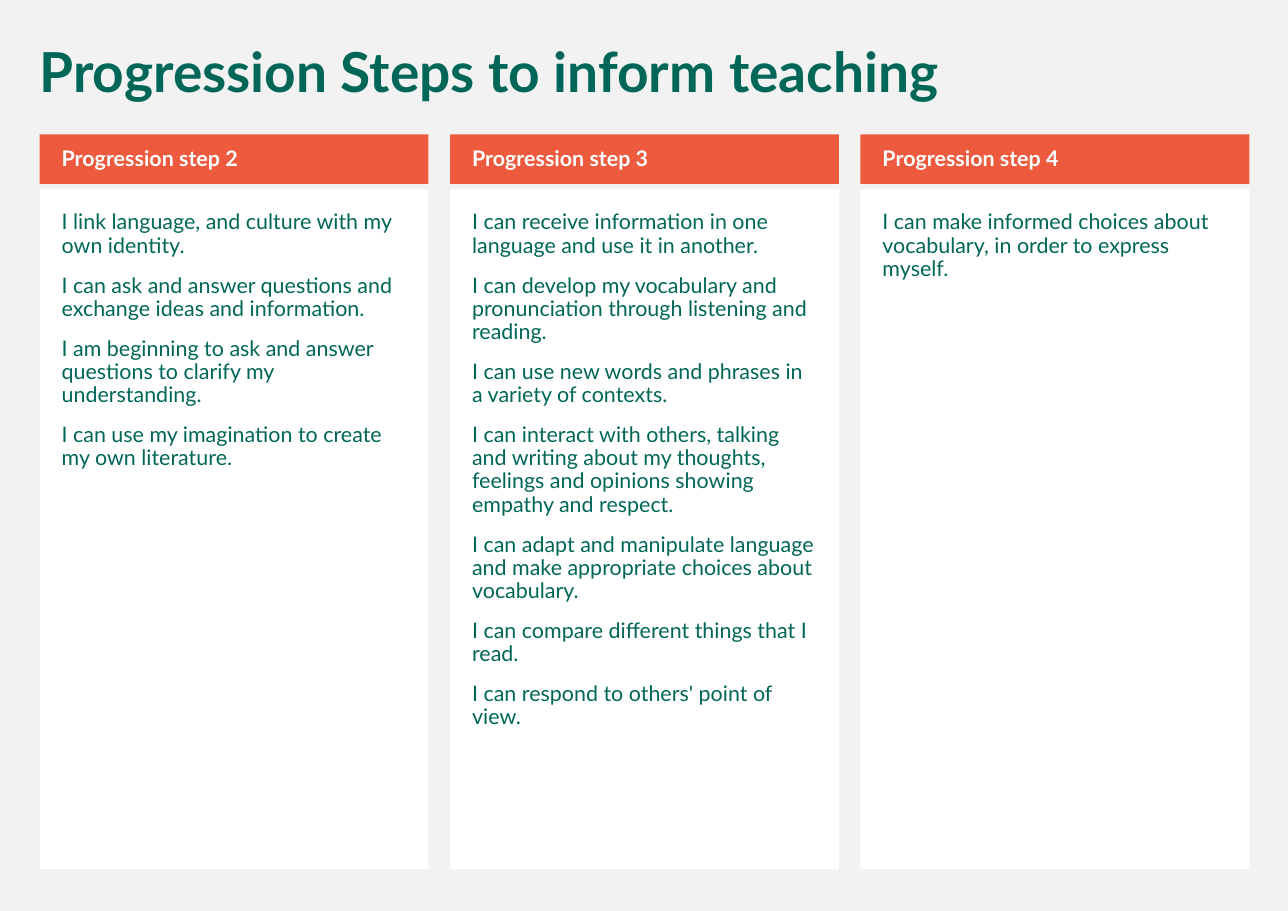
from pptx import Presentation
from pptx.dml.color import RGBColor
from pptx.enum.shapes import MSO_SHAPE
from pptx.enum.text import MSO_ANCHOR, PP_ALIGN
from pptx.util import Inches, Pt

RECTANGLE = MSO_SHAPE.RECTANGLE
TOP, MIDDLE = MSO_ANCHOR.TOP, MSO_ANCHOR.MIDDLE
LEFT = PP_ALIGN.LEFT

GREY = RGBColor(0xF2, 0xF2, 0xF2)
WHITE = RGBColor(0xFF, 0xFF, 0xFF)
ORANGE = RGBColor(0xED, 0x5A, 0x3E)
GREEN = RGBColor(0x00, 0x67, 0x58)

PARAGRAPH_FORMAT = {"alignment": LEFT, "line_spacing": 0.9, "space_before": Pt(11)}
TITLE_FONT = {"name": "Lato", "size": Pt(36), "bold": True}
HEADING_FONT = {"name": "Lato", "size": Pt(14), "bold": True}
BODY_FONT = {"name": "Lato", "size": Pt(14), "bold": False}

COLUMN_LEFT, COLUMN_TOP = 0.36, 1.22
COLUMN_WIDTH, COLUMN_HEIGHT = 3.53, 6.67
COLUMN_PITCH = 3.725
HEADING_HEIGHT, HEADING_GAP = 0.45, 0.05

STEPS = {
    "Progression step 2": [
        "I link language, and culture with my own identity.",
        "I can ask and answer questions and exchange ideas and information.",
        "I am beginning to ask and answer questions to clarify my understanding.",
        "I can use my imagination to create my own literature.",
    ],
    "Progression step 3": [
        "I can receive information in one language and use it in another.",
        "I can develop my vocabulary and pronunciation through listening and reading.",
        "I can use new words and phrases in a variety of contexts.",
        "I can interact with others, talking and writing about my thoughts, "
        "feelings and opinions showing empathy and respect.",
        "I can adapt and manipulate language and make appropriate choices about vocabulary.",
        "I can compare different things that I read.",
        "I can respond to others' point of view.",
    ],
    "Progression step 4": [
        "I can make informed choices about vocabulary, in order to express myself.",
    ],
}


def set_attributes(target, values):
    for name, value in values.items():
        setattr(target, name, value)


def write_text(shape, lines, font, color, anchor, insets):
    frame = shape.text_frame
    sides = ("margin_left", "margin_top", "margin_right", "margin_bottom")
    set_attributes(frame, {side: Inches(inset) for side, inset in zip(sides, insets)})
    set_attributes(frame, {"word_wrap": True, "vertical_anchor": anchor})
    for index, line in enumerate(lines):
        paragraph = frame.add_paragraph() if index else frame.paragraphs[0]
        set_attributes(paragraph, PARAGRAPH_FORMAT)
        run = paragraph.add_run()
        run.text = line
        set_attributes(run.font, font)
        run.font.color.rgb = color


def add_panel(slide, left, top, width, height, fill):
    shape = slide.shapes.add_shape(
        RECTANGLE, Inches(left), Inches(top), Inches(width), Inches(height)
    )
    shape.shadow.inherit = False
    shape.fill.solid()
    shape.fill.fore_color.rgb = fill
    shape.line.fill.background()
    return shape


def add_title(slide, left, top, width, height):
    shape = slide.shapes.add_textbox(
        Inches(left), Inches(top), Inches(width), Inches(height)
    )
    write_text(shape, ["Progression Steps to inform teaching"],
               TITLE_FONT, GREEN, TOP, (0.1, 0.05, 0.1, 0.05))


def add_step_column(slide, left, top, width, height, heading, statements):
    offset = HEADING_HEIGHT + HEADING_GAP
    body = add_panel(slide, left, top + offset, width, height - offset, WHITE)
    write_text(body, statements, BODY_FONT, GREEN, TOP, (0.2, 0.2, 0.2, 0.2))
    header = add_panel(slide, left, top, width, HEADING_HEIGHT, ORANGE)
    write_text(header, [heading], HEADING_FONT, WHITE, MIDDLE, (0.2, 0.05, 0.1, 0.05))


def main():
    presentation = Presentation()
    presentation.slide_width = Inches(11.69)
    presentation.slide_height = Inches(8.27)
    slide = presentation.slides.add_slide(presentation.slide_layouts[6])
    slide.background.fill.solid()
    slide.background.fill.fore_color.rgb = GREY

    add_title(slide, 0.26, 0.36, 11.08, 0.65)
    for index, (heading, statements) in enumerate(STEPS.items()):
        add_step_column(slide, COLUMN_LEFT + index * COLUMN_PITCH, COLUMN_TOP,
                        COLUMN_WIDTH, COLUMN_HEIGHT, heading, statements)
    presentation.save("out.pptx")


if __name__ == "__main__":
    main()
